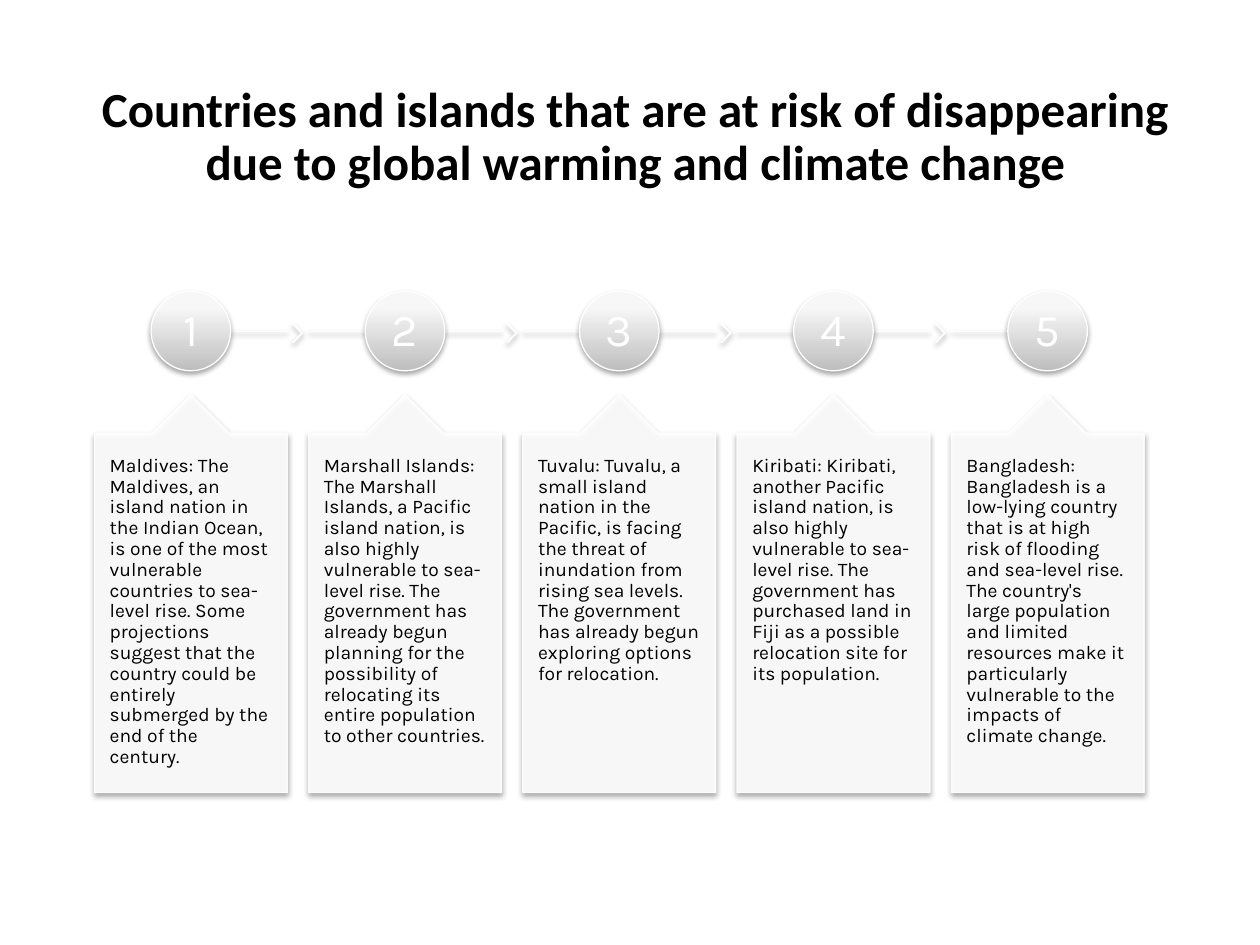
import pptx
import pptx.util
import pptx.dml.color
import pptx.enum.shapes
import pptx.enum.text
import pptx.oxml.ns
from lxml import etree
from dataclasses import dataclass

Pt = pptx.util.Pt
RGB = pptx.dml.color.RGBColor.from_string
MSO = pptx.enum.shapes.MSO_SHAPE
ALIGN = pptx.enum.text.PP_ALIGN
ANCHOR = pptx.enum.text.MSO_ANCHOR
qn = pptx.oxml.ns.qn


@dataclass
class Theme:
    ink: str = "000000"
    paper: str = "FFFFFF"
    panel_alpha: int = 90
    shadow_alpha: int = 35
    disc: tuple = ((0, "BEBEBE"), (80, "F7F7F7"), (100, "F8F8F8"))
    title_font: str = "Calibri"
    body_font: str = "Karla"
    title_size: float = 28
    number_size: float = 26
    body_size: float = 11


T = Theme()
TITLE = "Countries and islands that are at risk of disappearing due to global warming and climate change"
PLACES = [
    "Maldives: The Maldives, an island nation in the Indian Ocean, is one of the most vulnerable countries to sea-level rise. Some projections suggest that the country could be entirely submerged by the end of the century.",
    "Marshall Islands: The Marshall Islands, a Pacific island nation, is also highly vulnerable to sea-level rise. The government has already begun planning for the possibility of relocating its entire population to other countries.",
    "Tuvalu: Tuvalu, a small island nation in the Pacific, is facing the threat of inundation from rising sea levels. The government has already begun exploring options for relocation.",
    "Kiribati: Kiribati, another Pacific island nation, is also highly vulnerable to sea-level rise. The government has purchased land in Fiji as a possible relocation site for its population.",
    "Bangladesh: Bangladesh is a low-lying country that is at high risk of flooding and sea-level rise. The country's large population and limited resources make it particularly vulnerable to the impacts of climate change.",
]


def set_all(obj, values):
    for name, value in values.items():
        setattr(obj, name, value)


def write(sp, text, size, font, color, align, anchor, insets, bold=False):
    tf = sp.text_frame
    set_all(tf, {"word_wrap": True, "vertical_anchor": anchor})
    for side, inset in zip(("left", "top", "right", "bottom"), insets):
        setattr(tf, "margin_" + side, Pt(inset))
    p = tf.paragraphs[0]
    set_all(p, {"alignment": align, "line_spacing": 0.9})
    r = p.add_run()
    r.text = text
    set_all(r.font, {"size": Pt(size), "name": font, "bold": bold})
    r.font.color.rgb = RGB(color)


def add_alpha(color, percent):
    etree.SubElement(color, qn("a:alpha"), val=str(percent * 1000))


def add_shadow(sp):
    sp.shadow.inherit = False
    effects = sp._element.spPr.find(qn("a:effectLst"))
    shadow = etree.SubElement(
        effects, qn("a:outerShdw"), blurRad=str(Pt(3.1)), dist=str(Pt(1.8)),
        dir=str(90 * 60000), rotWithShape="0")
    add_alpha(etree.SubElement(shadow, qn("a:srgbClr"), val=T.ink), T.shadow_alpha)


def add_panel(slide, kind, box, adjustments=()):
    """Translucent white shape with a soft shadow."""
    sp = slide.shapes.add_shape(kind, *map(Pt, box))
    for i, value in enumerate(adjustments):
        sp.adjustments[i] = value
    sp.fill.solid()
    sp.fill.fore_color.rgb = sp.line.color.rgb = RGB(T.paper)
    sp.line.width = Pt(0.75)
    for color in list(sp._element.spPr.iter(qn("a:srgbClr"))):
        add_alpha(color, T.panel_alpha)
    add_shadow(sp)


def add_title(slide, box):
    sp = slide.shapes.title
    set_all(sp, dict(zip(("left", "top", "width", "height"), map(Pt, box))))
    write(sp, TITLE, T.title_size, T.title_font, T.ink, ALIGN.CENTER,
          ANCHOR.MIDDLE, (7.2, 3.6, 7.2, 3.6), bold=True)


def add_disc(slide, number, box):
    x, y, w, h = box
    sp = slide.shapes.add_shape(MSO.OVAL, *map(Pt, box))
    sp.fill.gradient()
    sp.fill.gradient_angle = 90
    stops = sp._element.spPr.find(".//" + qn("a:gsLst"))
    for stop in list(stops):
        stops.remove(stop)
    for pos, color in T.disc:
        stop = etree.SubElement(stops, qn("a:gs"), pos=str(pos * 1000))
        etree.SubElement(stop, qn("a:srgbClr"), val=color)
    sp.line.color.rgb = RGB(T.paper)
    sp.line.width = Pt(0.75)
    add_shadow(sp)
    label = slide.shapes.add_textbox(Pt(x + 6.6), Pt(y + 6.9), Pt(w - 13.2), Pt(h - 13.2))
    write(label, str(number), T.number_size, T.body_font, T.paper,
          ALIGN.CENTER, ANCHOR.MIDDLE, (1.75,) * 4)


def add_step(slide, number, text, box, first, last):
    x, y, w, h = box
    mid, rail_y = x + w / 2, y + 23
    # Rail and chevron
    start = mid + 6 if first else x
    end = mid if last else x + w
    add_panel(slide, MSO.RECTANGLE, (start, rail_y, end - start, 0))
    if not last:
        add_panel(slide, MSO.CHEVRON, (x + w + 3, rail_y - 4.5, 5.8, 10.8), [0.9])
    # Numbered disc
    add_disc(slide, number, (mid - 22.8, y, 45.5, 45.5))
    # Callout card, its text below the arrow
    card_y, arrow = y + 59, 0.2 * w
    card_h = h - 59
    add_panel(slide, MSO.UP_ARROW_CALLOUT, (x, card_y, w, card_h), [0.5, 0.2, 0.2, 1])
    sp = slide.shapes.add_textbox(Pt(x), Pt(card_y + arrow), Pt(w), Pt(card_h - arrow))
    write(sp, text, T.body_size, T.body_font, T.ink, ALIGN.LEFT,
          ANCHOR.TOP, (8.7, 13, 8.7, 13))


def add_timeline(slide, box):
    x, y, w, h = box
    gap, count = 12.2, len(PLACES)
    card_w = (w - gap * (count - 1)) / count
    for i, text in enumerate(PLACES):
        add_step(slide, i + 1, text, (x + i * (card_w + gap), y, card_w, h),
                 i == 0, i == count - 1)


def main():
    prs = pptx.Presentation()
    set_all(prs, {"slide_width": Pt(720), "slide_height": Pt(540)})
    slide = prs.slides.add_slide(prs.slide_layouts[5])
    add_title(slide, (41.8, 37.4, 642.2, 82.8))
    add_timeline(slide, (54, 166.4, 599.8, 286.5))
    prs.save("out.pptx")


if __name__ == "__main__":
    main()
